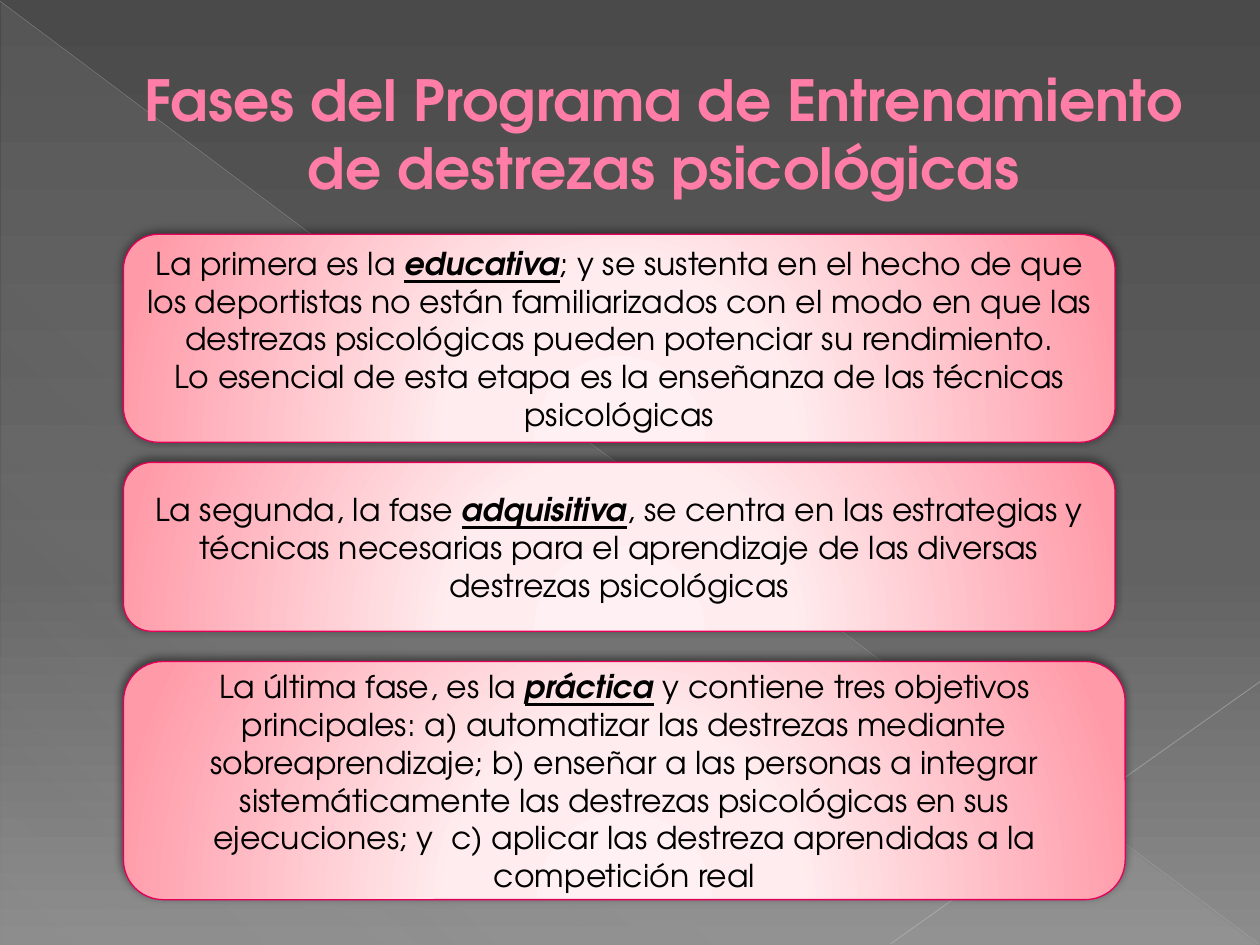
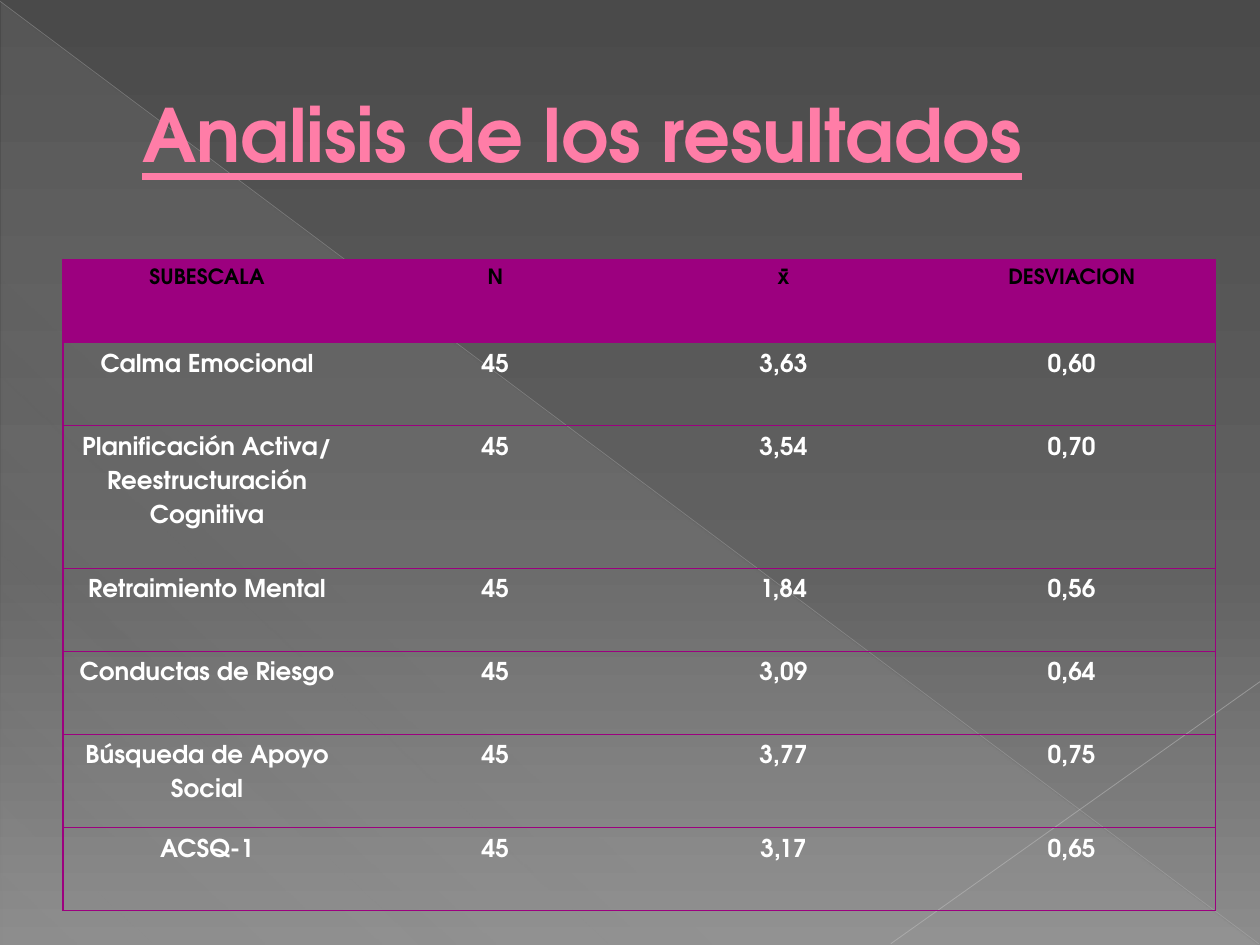
"""Build two slides on psychological skills training: its phases and the results."""
import lxml.etree
import pptx
import pptx.enum.shapes
import pptx.enum.text
import pptx.oxml.ns
import pptx.util

FONT = "TeX Gyre Adventor"
PINK, RASPBERRY, CRIMSON, PURPLE = "FF7DA7", "B12761", "E40059", "9C007F"
BLACK, WHITE, SILVER = "000000", "FFFFFF", "D2D2D2"
THIN = str(pptx.util.Pt(0.75))
LEFT, CENTER = pptx.enum.text.PP_ALIGN.LEFT, pptx.enum.text.PP_ALIGN.CENTER
MIDDLE = pptx.enum.text.MSO_ANCHOR.MIDDLE
qn = pptx.oxml.ns.qn
add_xml = lxml.etree.SubElement


def paint(parent, *stops, angle=None, focus=None):
    """Append a solid fill for one (hex, alpha) stop, or a gradient for (hex, alpha, position) stops."""
    gradient = len(stops) > 1
    fill = add_xml(parent, qn("a:gradFill" if gradient else "a:solidFill"))
    holder = add_xml(fill, qn("a:gsLst")) if gradient else fill
    for code, alpha, *position in stops:
        slot = add_xml(holder, qn("a:gs"), pos=str(position[0] * 1000)) if gradient else holder
        color = add_xml(slot, qn("a:srgbClr"), val=code)
        if alpha < 100:
            add_xml(color, qn("a:alpha"), val=str(alpha * 1000))
    if angle is not None:
        add_xml(fill, qn("a:lin"), ang=str(angle * 60000), scaled="0")
    if focus:
        circle = add_xml(fill, qn("a:path"), **{"path": "circle"})
        add_xml(circle, qn("a:fillToRect"), **{side: str(share * 1000) for side, share in zip("ltrb", focus)})


def write(frame, text, size, color, align=CENTER, bold=False, underline=False, outline=None, spacing=None):
    """Fill a text frame; newlines part paragraphs and asterisks enclose emphasis."""
    frame.word_wrap = True
    for number, line in enumerate(text.split("\n")):
        paragraph = frame.add_paragraph() if number else frame.paragraphs[0]
        paragraph.alignment = align
        if spacing:
            paragraph.line_spacing = spacing
        for part, words in enumerate(line.split("*")):
            emphasis = part % 2 == 1
            run = paragraph.add_run()
            run.text = words
            run.font.size = pptx.util.Pt(size)
            run.font.bold = bold or emphasis
            run.font.italic = emphasis
            run.font.underline = underline or emphasis
            properties = run._r.get_or_add_rPr()
            if outline:
                paint(add_xml(properties, qn("a:ln"), w=str(pptx.util.Pt(0.5))), (outline, 100))
            paint(properties, (color, 100))
            run.font.name = FONT


deck = pptx.Presentation()
deck.slide_width, deck.slide_height = pptx.util.Inches(10), pptx.util.Inches(7.5)
column, row = deck.slide_width // 1000, deck.slide_height // 750

deck.slide_master.background.fill.solid()
backdrop = deck.slide_master.element.find(".//" + qn("p:bgPr"))
for default in list(backdrop):
    backdrop.remove(default)
paint(backdrop, ("4A4A4A", 100, 0), ("626262", 100, 60), ("8C8C8C", 100, 100), angle=90)
add_xml(backdrop, qn("a:effectLst"))

diagonals = [
    ((0, 1), (999, 749), "BFBFBF", 0.39, 35),
    ((1000, 541), (707, 749), "C6C6C6", 0.47, 45),
]
headings = [
    ("Fases del Programa de Entrenamiento de destrezas psicológicas", 32.4, CENTER, False),
    ("Analisis de los resultados", 42, LEFT, True),
]
for heading, size, align, underline in headings:
    slide = deck.slides.add_slide(deck.slide_layouts[6])
    wedge = slide.shapes.add_shape(
        pptx.enum.shapes.MSO_SHAPE.RIGHT_TRIANGLE, column, 2 * row, 998 * column, 748 * row)
    paint(wedge.element.spPr, (SILVER, 10, 0), (SILVER, 8, 70), (SILVER, 1, 100), angle=133)
    wedge.line.fill.background()
    wedge.shadow.inherit = False

    for (x1, y1), (x2, y2), color, width, alpha in diagonals:
        diagonal = slide.shapes.add_connector(
            pptx.enum.shapes.MSO_CONNECTOR.STRAIGHT, x1 * column, y1 * row, x2 * column, y2 * row)
        stroke = add_xml(diagonal.element.spPr, qn("a:ln"), w=str(pptx.util.Pt(width)))
        paint(stroke, (color, alpha))
        add_xml(diagonal.element.spPr, qn("a:effectLst"))

    title = slide.shapes.add_textbox(50 * column, 29 * row, 900 * column, 153 * row).text_frame
    title.vertical_anchor = MIDDLE
    title.margin_left = 63 * column
    write(title, heading, size, PINK, align=align, bold=True, underline=underline, outline=RASPBERRY)

phases_slide, results_slide = deck.slides

phases = [
    (186, 787, 165, "La primera es la *educativa*; y se sustenta en el hecho de que los deportistas no están "
     "familiarizados con el modo en que las destrezas psicológicas pueden potenciar su rendimiento.\n"
     "Lo esencial de esta etapa es la enseñanza de las técnicas psicológicas"),
    (367, 787, 134, "La segunda, la fase *adquisitiva*, se centra en las estrategias y técnicas necesarias "
     "para el aprendizaje de las diversas destrezas psicológicas"),
    (525, 795, 189, "La última fase, es la *práctica* y contiene tres objetivos principales: a) automatizar "
     "las destrezas mediante sobreaprendizaje; b) enseñar a las personas a integrar sistemáticamente las "
     "destrezas psicológicas en sus ejecuciones; y  c) aplicar las destreza aprendidas a la competición real"),
]
for top, width, height, description in phases:
    phase = phases_slide.shapes.add_shape(
        pptx.enum.shapes.MSO_SHAPE.ROUNDED_RECTANGLE, 98 * column, top * row, width * column, height * row)
    phase_style = phase.element.spPr
    paint(phase_style, ("FFF1F3", 100, 0), ("FFECEE", 100, 34), ("FF9BA9", 100, 100), focus=(50, 155, 50, -55))
    paint(add_xml(phase_style, qn("a:ln"), w=THIN), (CRIMSON, 100))
    shadow = add_xml(add_xml(phase_style, qn("a:effectLst")), qn("a:outerShdw"), blurRad=str(pptx.util.Pt(5)),
                     dist=str(pptx.util.Pt(2)), dir=str(245 * 60000), rotWithShape="0")
    add_xml(add_xml(shadow, qn("a:srgbClr"), val=BLACK), qn("a:alpha"), val="50000")
    phase.text_frame.vertical_anchor = MIDDLE
    write(phase.text_frame, description, 18, BLACK)

results = [
    ("SUBESCALA", "N", "x̅", "DESVIACION"),
    ("Calma Emocional", "45", "3,63", "0,60"),
    ("Planificación Activa/ Reestructuración Cognitiva", "45", "3,54", "0,70"),
    ("Retraimiento Mental", "45", "1,84", "0,56"),
    ("Conductas de Riesgo", "45", "3,09", "0,64"),
    ("Búsqueda de Apoyo Social", "45", "3,77", "0,75"),
    ("ACSQ-1", "45", "3,17", "0,65"),
]
row_heights = [66, 66, 113, 66, 66, 74, 66]
last_measure = len(results[0]) - 1
no_style_no_grid = "{2D5ABB26-0587-4C30-8999-92F81FD0307C}"

scores = results_slide.shapes.add_table(
    len(results), len(results[0]), 50 * column, 206 * row, 915 * column, sum(row_heights) * row)
scores.table.horz_banding = False
scores.element.find(".//" + qn("a:tableStyleId")).text = no_style_no_grid

for subscale, (values, height) in enumerate(zip(results, row_heights)):
    scores.table.rows[subscale].height = height * row
    is_header = subscale == 0
    for measure, value in enumerate(values):
        cell = scores.table.cell(subscale, measure)
        cell.margin_left = cell.margin_right = 7 * column
        cell.margin_top = cell.margin_bottom = 0
        write(cell.text_frame, value, 12 if is_header else 14, BLACK if is_header else WHITE,
              bold=True, spacing=1.5)

        cell_style = cell._tc.get_or_add_tcPr()
        ruled_sides = {"L": measure == 0, "R": measure == last_measure, "T": True, "B": True}
        for side, ruled in ruled_sides.items():
            if ruled:
                paint(add_xml(cell_style, qn("a:ln" + side), w=THIN), (PURPLE, 100))
        if is_header:
            paint(cell_style, (PURPLE, 100))
        else:
            cell.fill.background()

deck.save("out.pptx")
